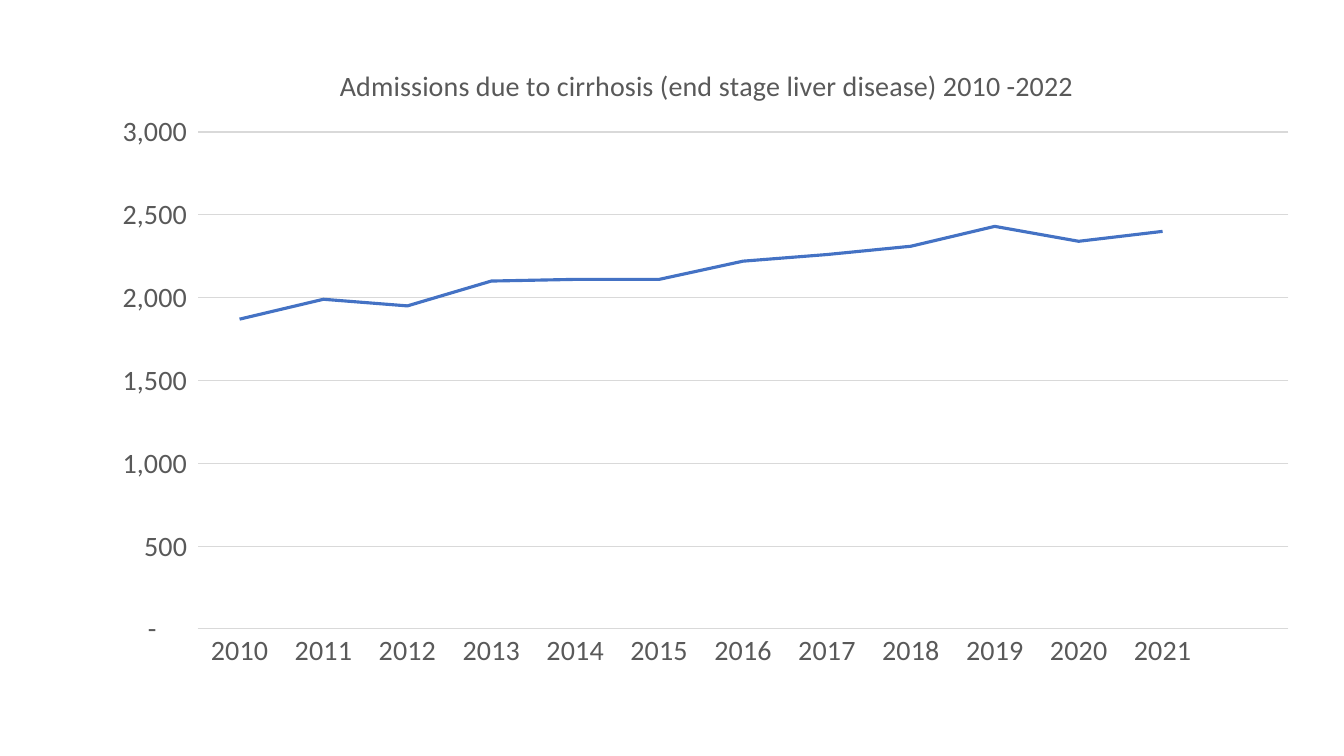
from lxml.etree import SubElement
from pptx import Presentation
from pptx.chart.data import CategoryChartData
from pptx.dml.color import RGBColor
from pptx.enum.chart import XL_CHART_TYPE, XL_TICK_MARK
from pptx.oxml import parse_xml
from pptx.oxml.ns import nsdecls, qn
from pptx.util import Inches, Pt

TITLE = "Admissions due to cirrhosis (end stage liver disease) 2010 -2022"
NUMBER_FORMAT = '_-* #,##0_-;\\-* #,##0_-;_-* "-"??_-;_-@_-'
ADMISSIONS = [1870, 1990, 1950, 2100, 2110, 2110, 2220, 2260, 2310, 2430, 2340, 2400, None]
YEARS = [str(year) for year in range(2010, 2022)] + [""]
TEXT, GRID, BLUE = "595959", "D9D9D9", "4472C4"
LEFT, TOP, WIDTH, HEIGHT = 0.92, 0.32, 12.11, 6.43


def style(target, color, size=None, width=None):
    """Colour a font or a line, and set its size or width."""
    if size:
        target.name, target.size, target.bold = "Calibri", Pt(size), False
        target.color.rgb = RGBColor.from_string(color)
    else:
        target.width = Pt(width)
        target.color.rgb = RGBColor.from_string(color)


def place(layout, left, top, width=None, height=None, inner=False):
    """Fix a chart part at a place given in inches on the slide."""
    manual = SubElement(layout, qn("c:manualLayout"))
    settings = [("xMode", "edge"), ("yMode", "edge"),
                ("x", (left - LEFT) / WIDTH), ("y", (top - TOP) / HEIGHT)]
    if inner:
        settings.insert(0, ("layoutTarget", "inner"))
        settings += [("w", width / WIDTH), ("h", height / HEIGHT)]
    for name, value in settings:
        SubElement(manual, qn("c:" + name)).set("val", str(value))


presentation = Presentation()
presentation.slide_width, presentation.slide_height = Inches(13.33), Inches(7.5)
slide = presentation.slides.add_slide(presentation.slide_layouts[6])

# Line chart
chart_data = CategoryChartData(number_format=NUMBER_FORMAT)
chart_data.categories = YEARS
chart_data.add_series(TITLE, ADMISSIONS)
chart = slide.shapes.add_chart(
    XL_CHART_TYPE.LINE, Inches(LEFT), Inches(TOP), Inches(WIDTH), Inches(HEIGHT), chart_data
).chart
chart.has_legend = False
style(chart.font, TEXT, size=20)
series = chart.plots[0].series[0]
series.smooth = False
style(series.format.line, BLUE, width=2.25)

# Title
chart.has_title = True
title = chart.chart_title
title.include_in_layout = False
title.text_frame.text = TITLE
style(title.text_frame.paragraphs[0].font, TEXT, size=20)

# Axes
for axis in (chart.category_axis, chart.value_axis):
    axis.major_tick_mark = axis.minor_tick_mark = XL_TICK_MARK.NONE
    style(axis.tick_labels.font, TEXT, size=20)
style(chart.category_axis.format.line, GRID, width=0.75)
value_axis = chart.value_axis
value_axis.minimum_scale, value_axis.maximum_scale, value_axis.major_unit = 0, 3000, 500
value_axis.tick_labels.number_format = NUMBER_FORMAT
value_axis.tick_labels.number_format_is_linked = False
value_axis.format.line.fill.background()
style(value_axis.major_gridlines.format.line, GRID, width=0.75)

# Positions of the title and the plot
plot_area = chart.element.find(".//" + qn("c:plotArea"))
for part, before in ((title.element, 1), (plot_area, 0)):
    if part.find(qn("c:layout")) is None:
        part.insert(before, parse_xml("<c:layout %s/>" % nsdecls("c")))
place(title.element.find(qn("c:layout")), 3.32, 0.6)
place(plot_area.find(qn("c:layout")), 1.96, 1.31, 10.82, 4.93, inner=True)

presentation.save("out.pptx")
